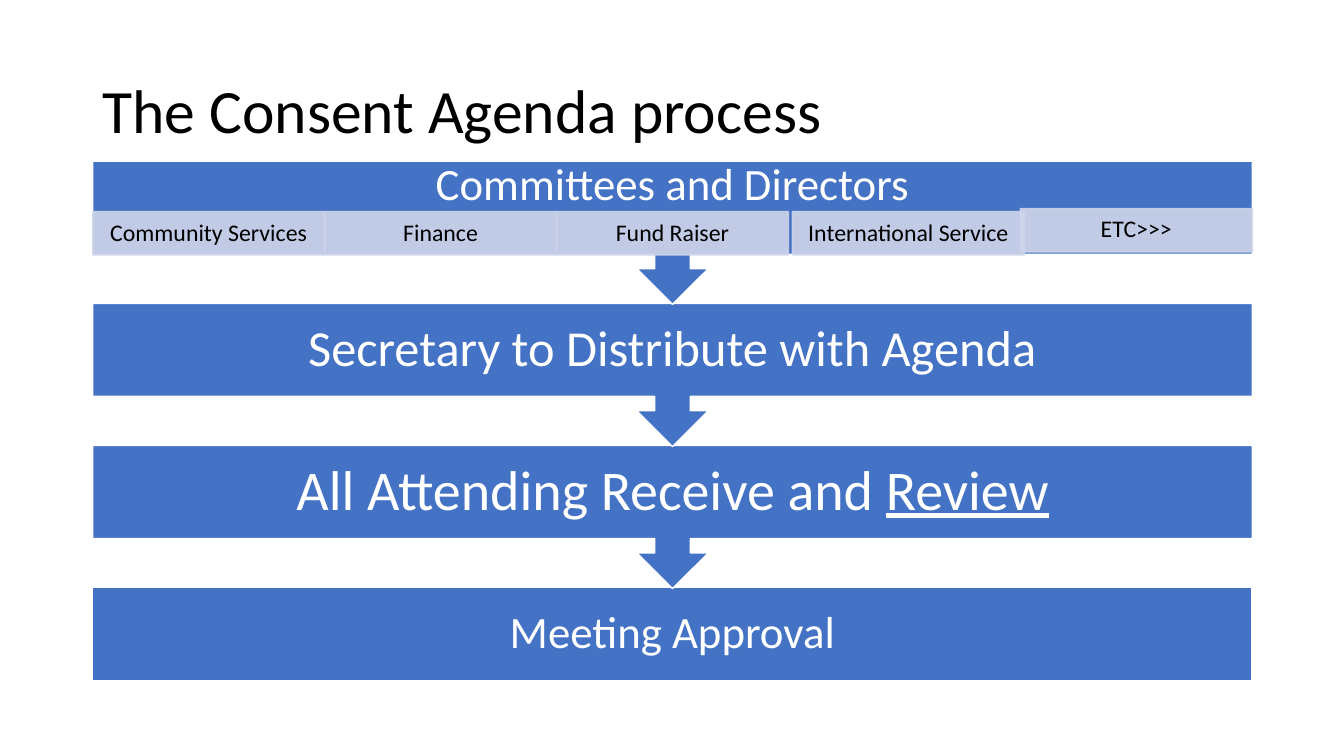
from pptx import Presentation
from pptx.dml.color import RGBColor
from pptx.enum import shapes as sh, text as tx
from pptx.oxml import parse_xml
from pptx.oxml.ns import nsdecls
from pptx.util import Inches, Pt

BLUE = RGBColor(0x44, 0x72, 0xC4)
PALE = RGBColor(0xCF, 0xD5, 0xEA)
WHITE = RGBColor(0xFF, 0xFF, 0xFF)
BLACK = RGBColor(0, 0, 0)

LEFT, WIDE = 0.92, 11.5
TOP, STEP = 1.6, 1.41
BAR, CALL = 0.92, 1.42

# Label, size, underlined tail, height of the text area
STEPS = [
    ("Committees and Directors", 32, "", 0.5),
    ("Secretary to Distribute with Agenda", 36, "", BAR),
    ("All Attending Receive and ", 40, "Review", BAR),
    ("Meeting Approval", 32, "", BAR),
]

# Label, left, top
TILES = [
    ("Community Services", 0.92, 2.1),
    ("Finance", 3.22, 2.1),
    ("Fund Raiser", 5.52, 2.1),
    ("International Service", 7.86, 2.1),
    ("ETC>>>", 10.12, 2.07),
]


def write(shape, label, size, color, align, pad, tail=""):
    frame = shape.text_frame
    frame.word_wrap = True
    frame.vertical_anchor = tx.MSO_ANCHOR.MIDDLE
    frame.margin_left = frame.margin_right = Inches(pad)
    frame.margin_top = frame.margin_bottom = 0
    para = frame.paragraphs[0]
    para.text = label
    if tail:
        para.add_run().text = tail
        para.runs[-1].font.underline = True
    para.alignment = align
    para.line_spacing = 0.9
    for run in para.runs:
        run.font.name = "Calibri"
        run.font.size = Pt(size)
        run.font.color.rgb = color


def add_box(slide, kind, place, fill, line):
    box = slide.shapes.add_shape(kind, *map(Inches, place))
    box.shadow.inherit = False
    box.fill.solid()
    box.fill.fore_color.rgb = fill
    box.line.color.rgb = line
    box.line.width = Pt(1)
    return box


def add_text(slide, place, *style):
    write(slide.shapes.add_textbox(*map(Inches, place)), *style)


def fade(box, share):
    # Transparency for both the fill and the outline
    for color in box._element.spPr.xpath(".//a:srgbClr"):
        color.append(parse_xml(
            f'<a:alpha {nsdecls("a")} val="{share * 1000}"/>'))


def add_step(slide, row, label, size, tail, high):
    top = TOP + row * STEP
    last = row == len(STEPS) - 1
    kind = sh.MSO_SHAPE.RECTANGLE if last else sh.MSO_SHAPE.UP_ARROW_CALLOUT
    box = add_box(slide, kind, (LEFT, top, WIDE, BAR if last else CALL),
                  BLUE, WHITE)
    style = (label, size, WHITE, tx.PP_ALIGN.CENTER, 0.25, tail)
    if last:
        write(box, *style)
    else:
        # The turned callout points down, so its label sits in its own box
        box.rotation = 180
        add_text(slide, (LEFT, top, WIDE, high), *style)


def add_tile(slide, label, left, top):
    box = add_box(slide, sh.MSO_SHAPE.RECTANGLE, (left, top, 2.3, 0.43),
                  PALE, PALE)
    fade(box, 90)
    write(box, label, 17, BLACK, tx.PP_ALIGN.CENTER, 0.13)


def main():
    deck = Presentation()
    deck.slide_width, deck.slide_height = Inches(13.33), Inches(7.5)
    slide = deck.slides.add_slide(deck.slide_layouts[6])

    # Title
    add_text(slide, (LEFT, 0.4, WIDE, 1.45), "The Consent Agenda process",
             44, BLACK, tx.PP_ALIGN.LEFT, 0.1)

    # Process steps, lowest first so that each arrow lies on top
    for row, step in reversed(list(enumerate(STEPS))):
        add_step(slide, row, *step)

    # Committees
    for tile in TILES:
        add_tile(slide, *tile)

    deck.save("out.pptx")


if __name__ == "__main__":
    main()
